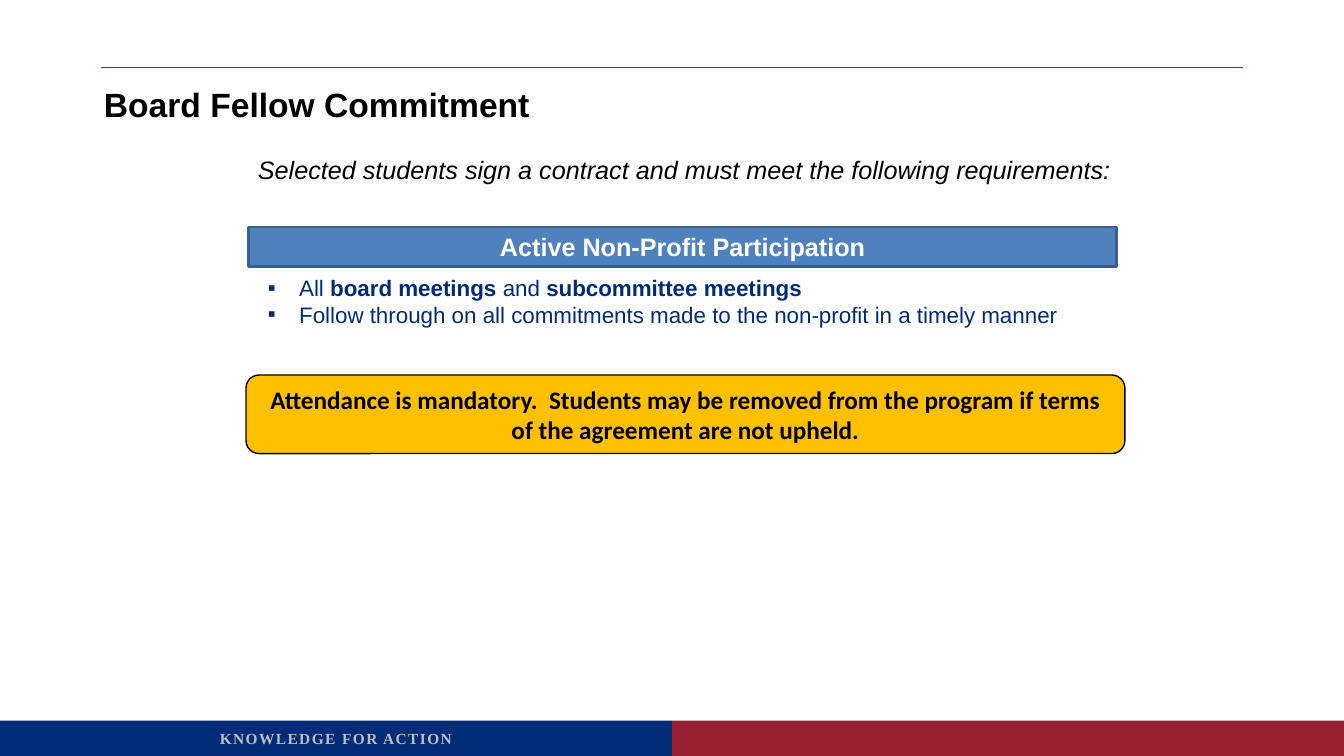
from dataclasses import dataclass

from lxml import etree
from pptx import Presentation
from pptx.dml.color import RGBColor
from pptx.enum.shapes import MSO_CONNECTOR, MSO_SHAPE
from pptx.enum.text import MSO_ANCHOR, MSO_AUTO_SIZE, PP_ALIGN
from pptx.oxml.ns import qn
from pptx.util import Cm, Pt

LEFT, CENTER = PP_ALIGN.LEFT, PP_ALIGN.CENTER
TOP, MIDDLE = MSO_ANCHOR.TOP, MSO_ANCHOR.MIDDLE
RECTANGLE, ROUNDED = MSO_SHAPE.RECTANGLE, MSO_SHAPE.ROUNDED_RECTANGLE

TITLE = "Board Fellow Commitment"
INTRODUCTION = "Selected students sign a contract and must meet the following requirements:"
HEADING = "Active Non-Profit Participation"
REQUIREMENTS = [
    [("All ", False), ("board meetings ", True), ("and ", False), ("subcommittee meetings", True)],
    [("Follow through on all commitments made to the non-profit in a timely manner", False)],
]
WARNING = ("Attendance is mandatory.  Students may be removed from the program "
           "if terms of the agreement are not upheld.")
MOTTO = "KNOWLEDGE FOR ACTION"

SLIDE_WIDTH, SLIDE_HEIGHT = 33.87, 19.05
HALF_WIDTH = SLIDE_WIDTH / 2
FOOTER_TOP = 18.16
FOOTER_HEIGHT = SLIDE_HEIGHT - FOOTER_TOP
RULE_MARGIN, RULE_TOP = 2.54, 1.7
BULLET_INDENT = 0.79


@dataclass(frozen=True)
class Theme:
    """Colours, fonts and type sizes of the slide."""
    navy: str = "002C77"
    crimson: str = "981E32"
    blue: str = "4F81BD"
    blue_edge: str = "3A5F8C"
    amber: str = "FFC000"
    black: str = "000000"
    white: str = "FFFFFF"
    silver: str = "BFBFBF"
    sans: str = "Arial"
    callout: str = "Calibri"
    serif: str = "Times New Roman"
    title_size: int = 24
    text_size: int = 18
    bullet_size: int = 16
    motto_size: int = 11


THEME = Theme()


def color(value):
    """Turn a hexadecimal value into a colour."""
    return RGBColor.from_string(value)


def add_bullet(paragraph, symbol, bullet_color):
    """Give a paragraph a coloured bullet and a hanging indent."""
    properties = paragraph._p.get_or_add_pPr()
    properties.set("marL", str(Cm(BULLET_INDENT)))
    properties.set("indent", str(-Cm(BULLET_INDENT)))
    bullet = etree.SubElement(properties, qn("a:buClr"))
    etree.SubElement(bullet, qn("a:srgbClr"), val=bullet_color)
    etree.SubElement(properties, qn("a:buFont"), typeface=THEME.sans)
    etree.SubElement(properties, qn("a:buChar"), char=symbol)


def write_text(shape, paragraphs, *, size, ink, font=THEME.sans, bold=False, italic=False,
               align=LEFT, anchor=TOP, bullet=None, spacing=None, inset=None):
    """Fill a shape with text: one string, or lists of (text, bold) runs."""
    if isinstance(paragraphs, str):
        paragraphs = [[(paragraphs, bold)]]
    frame = shape.text_frame
    frame.word_wrap = True
    frame.auto_size = MSO_AUTO_SIZE.NONE
    frame.vertical_anchor = anchor
    if inset is not None:
        frame.margin_left = frame.margin_right = Cm(inset)
        frame.margin_top = frame.margin_bottom = Cm(inset)
    for index, runs in enumerate(paragraphs):
        paragraph = frame.add_paragraph() if index else frame.paragraphs[0]
        paragraph.alignment = align
        if bullet:
            add_bullet(paragraph, bullet, ink)
        for text, heavy in runs:
            run = paragraph.add_run()
            run.text = text
            run.font.name, run.font.size = font, Pt(size)
            run.font.bold, run.font.italic = heavy, italic
            run.font.color.rgb = color(ink)
            if spacing:
                run.font._element.set("spc", str(spacing * 100))


def add_box(slide, kind, left, top, width, height, fill, edge=None, edge_width=1):
    """Add a filled shape, outlined when an edge colour is given."""
    shape = slide.shapes.add_shape(kind, Cm(left), Cm(top), Cm(width), Cm(height))
    shape.shadow.inherit = False
    shape.fill.solid()
    shape.fill.fore_color.rgb = color(fill)
    if edge:
        shape.line.color.rgb = color(edge)
        shape.line.width = Pt(edge_width)
    else:
        shape.line.fill.background()
    return shape


def add_text(slide, left, top, width, height, paragraphs, **style):
    """Add a text box with formatted text."""
    box = slide.shapes.add_textbox(Cm(left), Cm(top), Cm(width), Cm(height))
    write_text(box, paragraphs, **style)


def add_frame(slide):
    """Add the footer bands, the motto and the rule above the title."""
    for left, fill in ((HALF_WIDTH, THEME.crimson), (0, THEME.navy)):
        add_box(slide, RECTANGLE, left, FOOTER_TOP, HALF_WIDTH, FOOTER_HEIGHT, fill)
    add_text(slide, 0, 18.24, HALF_WIDTH, 0.73, MOTTO, size=THEME.motto_size, ink=THEME.silver,
             font=THEME.serif, bold=True, align=CENTER, spacing=1)
    rule = slide.shapes.add_connector(MSO_CONNECTOR.STRAIGHT, Cm(RULE_MARGIN), Cm(RULE_TOP),
                                      Cm(SLIDE_WIDTH - RULE_MARGIN), Cm(RULE_TOP))
    rule.line.color.rgb = color(THEME.crimson)
    rule.line.width = Pt(0.5)
    etree.SubElement(rule._element.spPr, qn("a:effectLst"))


def add_content(slide):
    """Add the title, the requirements and the warning."""
    title = slide.shapes.title
    title.left, title.top, title.width, title.height = Cm(2.62), Cm(2.11), Cm(21.59), Cm(2.11)
    write_text(title, TITLE, size=THEME.title_size, ink=THEME.black, bold=True, inset=0)
    add_text(slide, 6.25, 3.76, 22.56, 1.03, INTRODUCTION,
             size=THEME.text_size, ink=THEME.black, italic=True)
    add_text(slide, 6.5, 6.78, 21.64, 2.31, REQUIREMENTS,
             size=THEME.bullet_size, ink=THEME.navy, bullet="▪")
    warning = add_box(slide, ROUNDED, 6.2, 9.45, 22.15, 1.98, THEME.amber, THEME.black)
    write_text(warning, WARNING, size=THEME.text_size, ink=THEME.black, font=THEME.callout,
               bold=True, align=CENTER, anchor=MIDDLE)
    heading = add_box(slide, RECTANGLE, 6.27, 5.72, 21.87, 1, THEME.blue, THEME.blue_edge, 2)
    write_text(heading, HEADING, size=THEME.text_size, ink=THEME.white, bold=True,
               align=CENTER, anchor=MIDDLE)


def main():
    """Build and save the slide."""
    presentation = Presentation()
    presentation.slide_width, presentation.slide_height = Cm(SLIDE_WIDTH), Cm(SLIDE_HEIGHT)
    slide = presentation.slides.add_slide(presentation.slide_layouts[5])
    add_frame(slide)
    add_content(slide)
    presentation.save("out.pptx")


if __name__ == "__main__":
    main()
